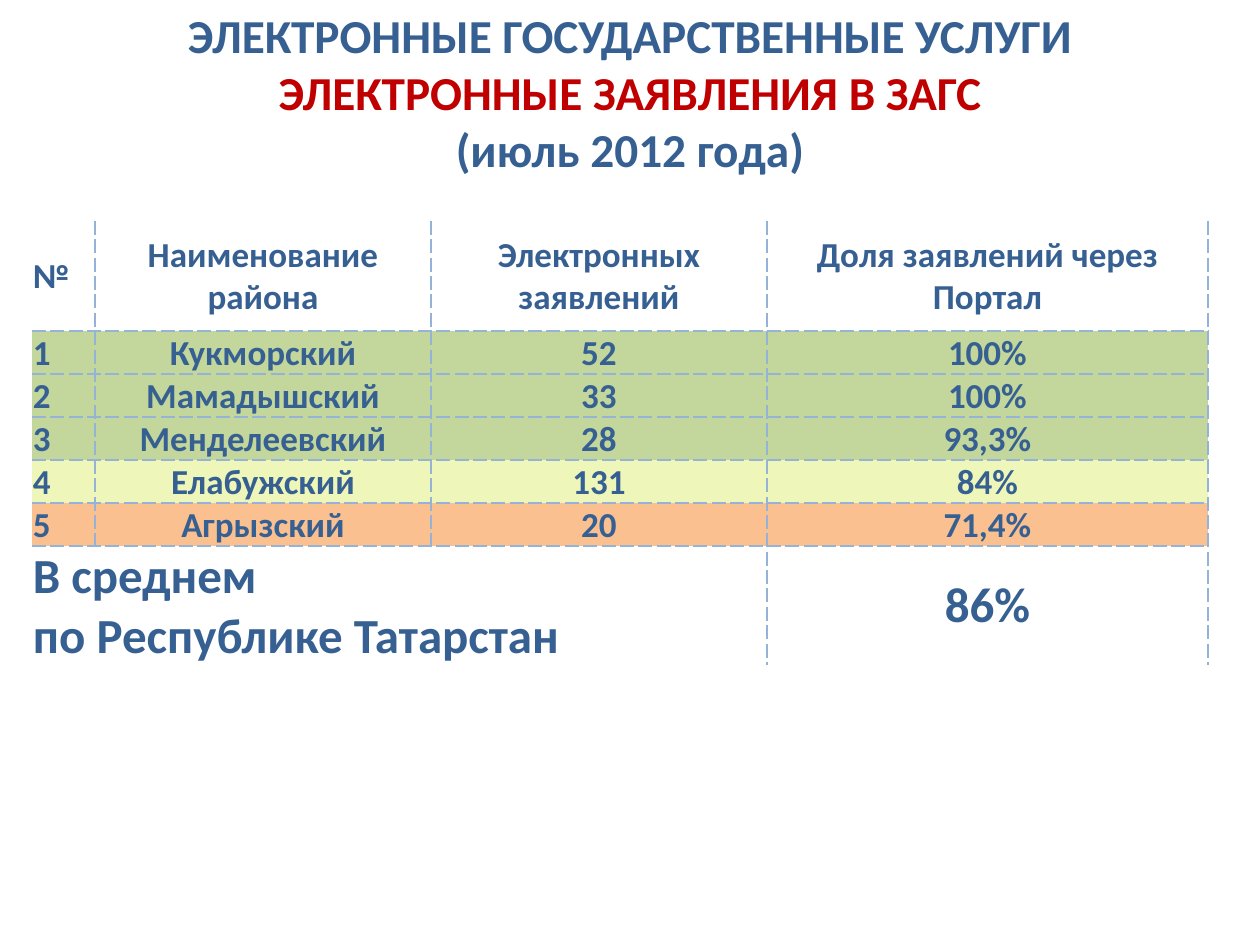
from dataclasses import dataclass

import lxml.etree
import pptx
import pptx.dml.color
import pptx.enum.text
import pptx.oxml.ns
import pptx.util

EMU_PER_INCH = 914400
PX_PER_INCH = 126
BLUE, RED, BORDER = "376092", "C00000", "95B3D7"
GREEN, YELLOW, ORANGE = "C3D69B", "EEF7B9", "FAC090"
ALIGN = pptx.enum.text.PP_ALIGN
ANCHOR = pptx.enum.text.MSO_ANCHOR


@dataclass(frozen=True)
class District:
    name: str
    applications: str
    share: str
    fill: str


HEADINGS = ["№", "Наименование района", "Электронных заявлений", "Доля заявлений через Портал"]
DISTRICTS = [
    District("Кукморский", "52", "100%", GREEN),
    District("Мамадышский", "33", "100%", GREEN),
    District("Менделеевский", "28", "93,3%", GREEN),
    District("Елабужский", "131", "84%", YELLOW),
    District("Агрызский", "20", "71,4%", ORANGE),
]
AVERAGE = ["В среднем\nпо Республике Татарстан", "", "", "86%"]
COLUMN_WIDTHS = [63, 336, 336, 441]
HEADER_HEIGHT, ROW_HEIGHT, TABLE_HEIGHT = 110, 36, 445


def px(length: int) -> int:
    return round(length * EMU_PER_INCH / PX_PER_INCH)


def rgb(value: str) -> pptx.dml.color.RGBColor:
    return pptx.dml.color.RGBColor.from_string(value)


def write_line(paragraph, text: str, size: int, color: str, align) -> None:
    paragraph.alignment = align
    run = paragraph.add_run()
    run.text = text
    run.font.name = "Calibri"
    run.font.size = pptx.util.Pt(size)
    run.font.bold = True
    run.font.color.rgb = rgb(color)


def write_lines(frame, lines: list[tuple[str, str]], size: int, align) -> None:
    """Write (text, colour) pairs, one paragraph each."""
    for index, (text, color) in enumerate(lines):
        paragraph = frame.add_paragraph() if index else frame.paragraphs[0]
        write_line(paragraph, text, size, color, align)


def set_borders(cell, sides: dict[str, bool]) -> None:
    """Dash the sides marked True and clear the others; sides come in L, R, T, B order."""
    properties = cell._tc.get_or_add_tcPr()
    for position, (side, visible) in enumerate(sides.items()):
        line = lxml.etree.Element(pptx.oxml.ns.qn(f"a:ln{side}"), w=str(pptx.util.Pt(1.5)))
        if visible:
            solid = lxml.etree.SubElement(line, pptx.oxml.ns.qn("a:solidFill"))
            lxml.etree.SubElement(solid, pptx.oxml.ns.qn("a:srgbClr"), val=BORDER)
            lxml.etree.SubElement(line, pptx.oxml.ns.qn("a:prstDash"), val="sysDash")
        else:
            lxml.etree.SubElement(line, pptx.oxml.ns.qn("a:noFill"))
        properties.insert(position, line)


def add_title(slide) -> None:
    title = slide.shapes.title
    title.left, title.top, title.width, title.height = 0, 0, px(1260), px(184)
    frame = title.text_frame
    frame.word_wrap = True
    frame.vertical_anchor = ANCHOR.TOP
    frame.auto_size = pptx.enum.text.MSO_AUTO_SIZE.SHAPE_TO_FIT_TEXT
    lines = [
        ("ЭЛЕКТРОННЫЕ ГОСУДАРСТВЕННЫЕ УСЛУГИ", BLUE),
        ("ЭЛЕКТРОННЫЕ ЗАЯВЛЕНИЯ В ЗАГС", RED),
        ("(июль 2012 года)", BLUE),
    ]
    write_lines(frame, lines, 27, ALIGN.CENTER)


def add_district_table(slide) -> None:
    rows = [HEADINGS]
    rows += [[str(n), d.name, d.applications, d.share] for n, d in enumerate(DISTRICTS, 1)]
    rows.append(AVERAGE)
    last = len(rows) - 1
    holder = slide.shapes.add_table(
        len(rows), len(HEADINGS), px(32), px(221), px(sum(COLUMN_WIDTHS)), px(TABLE_HEIGHT)
    )
    table = holder.table
    table.first_row = table.horz_banding = False
    for column, width in zip(table.columns, COLUMN_WIDTHS):
        column.width = px(width)
    for index, row in enumerate(table.rows):
        row.height = px(ROW_HEIGHT if index else HEADER_HEIGHT)
    holder.height = px(TABLE_HEIGHT)
    table.cell(last, 0).merge(table.cell(last, 2))

    for r, texts in enumerate(rows):
        is_district = 0 < r < last
        for c, text in enumerate(texts):
            cell = table.cell(r, c)
            if cell.is_spanned:
                continue
            cell.margin_left = cell.margin_right = cell.margin_top = px(1)
            cell.margin_bottom = 0
            cell.vertical_anchor = ANCHOR.BOTTOM if is_district and c == 1 else ANCHOR.MIDDLE
            if is_district:
                cell.fill.solid()
                cell.fill.fore_color.rgb = rgb(DISTRICTS[r - 1].fill)
            else:
                cell.fill.background()
            set_borders(cell, {"L": c > 0, "R": True, "T": r > 0, "B": r < last})
            lines = [(line, BLUE) for line in text.split("\n")]
            align = ALIGN.CENTER if c else ALIGN.LEFT
            write_lines(cell.text_frame, lines, 28 if r == last else 20, align)


def main() -> None:
    presentation = pptx.Presentation()
    presentation.slide_width, presentation.slide_height = px(1260), px(945)
    slide = presentation.slides.add_slide(presentation.slide_layouts.get_by_name("Title Only"))
    add_title(slide)
    add_district_table(slide)
    presentation.save("out.pptx")


if __name__ == "__main__":
    main()
